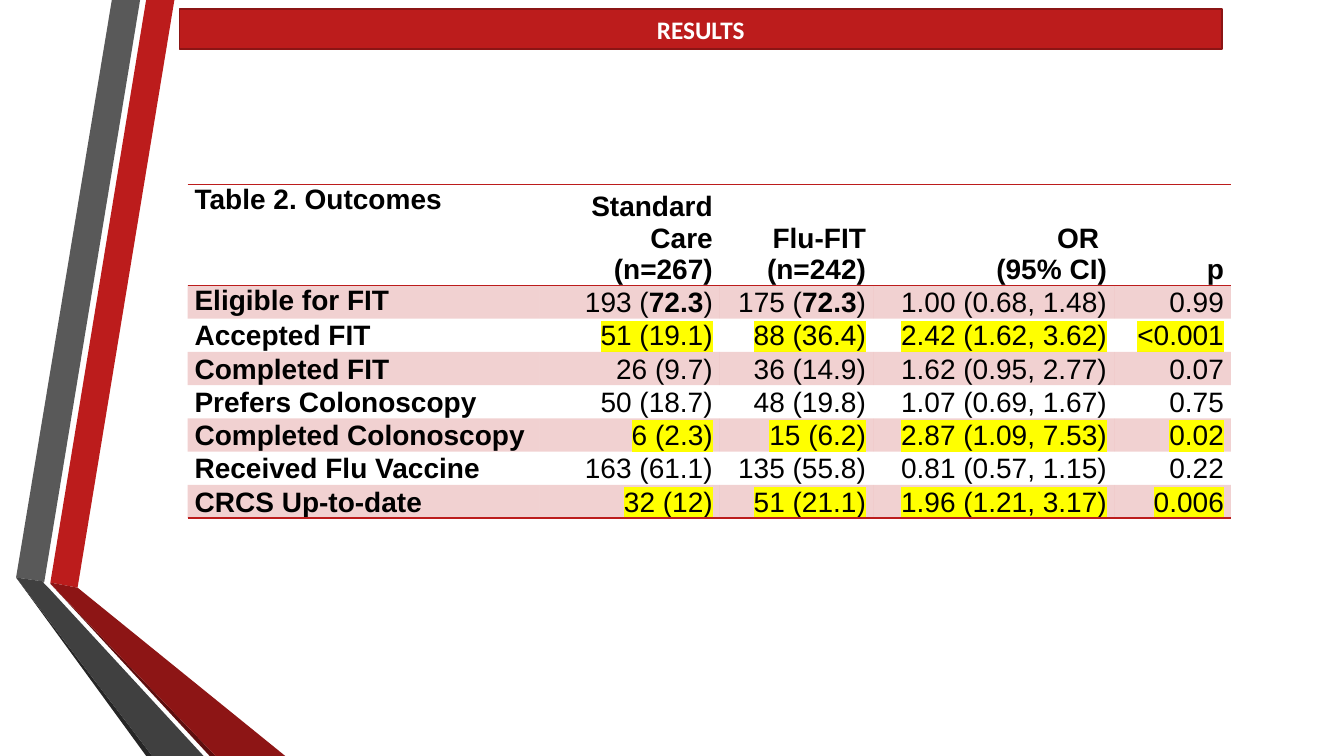
from pptx import Presentation
from pptx.util import Inches, Pt
from pptx.dml.color import RGBColor as RGB
from pptx.enum.shapes import MSO_SHAPE as Shape
from pptx.enum.text import PP_ALIGN as Align, MSO_ANCHOR as Anchor
from pptx.oxml import parse_xml as to_xml
from pptx.oxml.ns import qn, nsdecls

HUES = {
    "red": "BC1C1C", "edge": "8B1515", "deep": "8D1515", "wine": "5E0E0E",
    "gray": "595959", "dark": "404040", "coal": "262626",
    "white": "FFFFFF", "black": "000000", "mark": "FFFF00",
}
PLAIN = "{2D5ABB26-0587-4C30-8999-92F81FD0307C}"  # no style, no grid

# Ribbon bands, back to front: colour and corners
BANDS = [
    ("red", [(0.5, 5.78), (0.77, 5.83), (1.73, 0), (1.45, 0)]),
    ("gray", [(1.39, 0), (1.11, 0), (0.16, 5.73), (0.44, 5.77)]),
    ("coal", [(0.16, 5.73), (1.45, 7.5), (1.51, 7.5)]),
    ("wine", [(0.5, 5.79), (2.08, 7.5), (2.14, 7.5)]),
    ("deep", [(0.5, 5.79), (2.14, 7.5), (2.83, 7.5), (0.77, 5.83), (0.5, 5.78)]),
    ("dark", [(2.02, 7.5), (0.48, 5.83), (0.43, 5.78), (0.44, 5.77),
              (0.16, 5.73), (1.51, 7.5)]),
]

# Outcomes; asterisks enclose bold text
HEAD = ["Table 2. Outcomes", "Standard Care\n(n=267)", "Flu-FIT\n(n=242)",
        "OR \n(95% CI)", "p"]
ROWS = [
    ["Eligible for FIT", "193 (*72.3*)", "175 (*72.3*)", "1.00 (0.68, 1.48)", "0.99"],
    ["Accepted FIT", "51 (19.1)", "88 (36.4)", "2.42 (1.62, 3.62)", "<0.001"],
    ["Completed FIT", "26 (9.7)", "36 (14.9)", "1.62 (0.95, 2.77)", "0.07"],
    ["Prefers Colonoscopy", "50 (18.7)", "48 (19.8)", "1.07 (0.69, 1.67)", "0.75"],
    ["Completed Colonoscopy", "6 (2.3)", "15 (6.2)", "2.87 (1.09, 7.53)", "0.02"],
    ["Received Flu Vaccine", "163 (61.1)", "135 (55.8)", "0.81 (0.57, 1.15)", "0.22"],
    ["CRCS Up-to-date", "32 (12)", "51 (21.1)", "1.96 (1.21, 3.17)", "0.006"],
]
WIDTHS = [3.49, 1.79, 1.52, 2.39, 1.16]
MARKED = {2, 5, 7}  # rows with significant results


def write(frame, text, size=20, font="Arial", hue="black", bold=False,
          mark=None, align=Align.LEFT):
    para = frame.paragraphs[0]
    para.alignment = align
    for row, line in enumerate(text.split("\n")):
        if row:
            para.add_line_break()
        for part, words in enumerate(line.split("*")):
            run = para.add_run()
            run.text = words
            run.font.size, run.font.name = Pt(size), font
            run.font.bold = bold or part % 2 == 1
            run.font.color.rgb = RGB.from_string(HUES[hue])
            if mark:
                fill = run.font.fill._xPr.find(qn("a:solidFill"))
                fill.addnext(to_xml(
                    f'<a:highlight {nsdecls("a")}><a:srgbClr val="{HUES[mark]}"/>'
                    '</a:highlight>'))


class Deck:
    def __init__(self):
        self.show = Presentation()
        self.show.slide_width, self.show.slide_height = Inches(13.33), Inches(7.5)
        self.slide = self.show.slides.add_slide(self.show.slide_layouts[6])

    def paint(self, item, hue):
        item.fill.solid()
        item.fill.fore_color.rgb = RGB.from_string(HUES[hue])

    def ribbon(self, bands):
        group = self.slide.shapes.add_group_shape()
        for hue, spots in bands:
            first, *rest = [(Inches(x), Inches(y)) for x, y in spots]
            pen = group.shapes.build_freeform(*first)
            pen.add_line_segments(rest, close=True)
            band = pen.convert_to_shape()
            band.shadow.inherit = False
            self.paint(band, hue)
            band.line.fill.background()

    def banner(self, text, x, y, w, h):
        bar = self.slide.shapes.add_shape(
            Shape.RECTANGLE, Inches(x), Inches(y), Inches(w), Inches(h))
        bar.shadow.inherit = False
        self.paint(bar, "red")
        bar.line.color.rgb = RGB.from_string(HUES["edge"])
        bar.line.width = Pt(1.25)
        bar.text_frame.vertical_anchor = Anchor.MIDDLE
        write(bar.text_frame, text, size=18, font="Calibri", hue="white",
              bold=True, align=Align.CENTER)

    def rule(self, cell, sides):
        for spot, side in enumerate(sides):
            cell._tc.get_or_add_tcPr().insert(spot, to_xml(
                f'<a:ln{side} {nsdecls("a")} w="12700"><a:solidFill>'
                f'<a:srgbClr val="{HUES["red"]}"/></a:solidFill></a:ln{side}>'))

    def tint(self, cell, hue, share):
        self.paint(cell, hue)
        for tone in cell._tc.tcPr.iter(qn("a:srgbClr")):
            tone.append(to_xml(f'<a:alpha {nsdecls("a")} val="{share * 1000}"/>'))

    def table(self, rows, x, y, top, step):
        last = len(rows) - 1
        frame = self.slide.shapes.add_table(
            len(rows), len(WIDTHS), Inches(x), Inches(y),
            Inches(sum(WIDTHS)), Inches(top + step * last))
        for style in frame._element.iter(qn("a:tableStyleId")):
            style.text = PLAIN
        grid = frame.table
        grid.first_row = grid.horz_banding = False
        for col, width in enumerate(WIDTHS):
            grid.columns[col].width = Inches(width)
        for r, row in enumerate(rows):
            grid.rows[r].height = Inches(step if r else top)
            for c, text in enumerate(row):
                cell = grid.cell(r, c)
                cell.margin_left = cell.margin_right = Inches(0.07)
                cell.margin_top = cell.margin_bottom = 0
                cell.vertical_anchor = Anchor.TOP if c == 0 and r < 2 else Anchor.BOTTOM
                write(cell.text_frame, text, bold=r == 0 or c == 0,
                      mark="mark" if c and r in MARKED else None,
                      align=Align.RIGHT if c else Align.LEFT)
                if r % 2:
                    self.tint(cell, "red", 20)
                else:
                    cell.fill.background()
                if r in (0, last):
                    self.rule(cell, "B" if r else "TB")


def main():
    deck = Deck()
    deck.ribbon(BANDS)
    deck.banner("RESULTS", 1.78, 0.09, 10.34, 0.4)
    deck.table([HEAD] + ROWS, 1.86, 1.83, top=1, step=0.33)
    deck.show.save("out.pptx")


if __name__ == "__main__":
    main()
